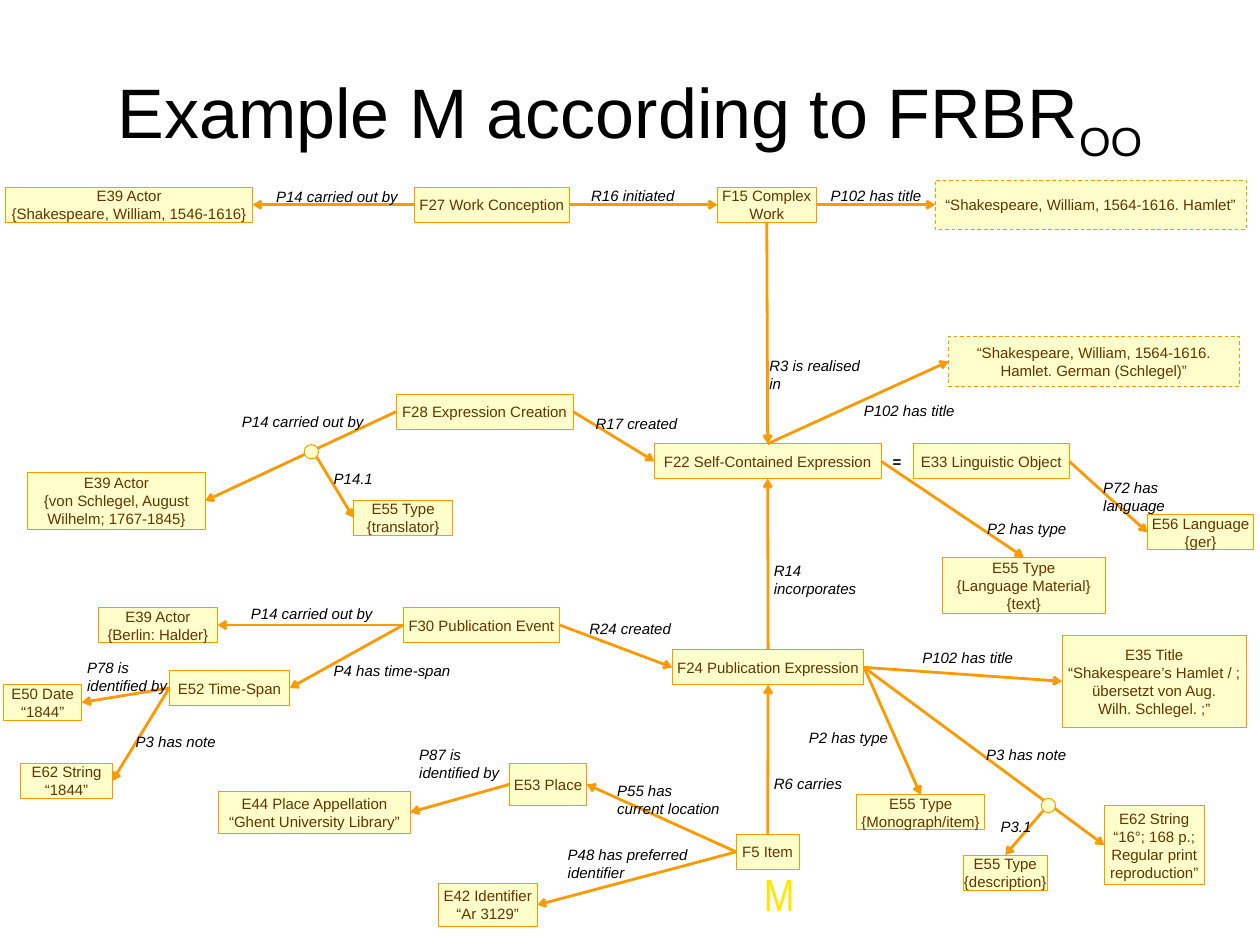
from dataclasses import dataclass, field
from enum import IntEnum

from pptx import Presentation
from pptx.dml.color import RGBColor
from pptx.enum.dml import MSO_LINE
from pptx.enum.shapes import MSO_CONNECTOR, MSO_SHAPE
from pptx.enum.text import MSO_ANCHOR, MSO_AUTO_SIZE, PP_ALIGN
from pptx.oxml.ns import qn
from pptx.util import Inches, Pt
from lxml.etree import SubElement


@dataclass(frozen=True)
class Theme:
    """Colours, fonts and sizes of the slide."""
    black: RGBColor = RGBColor.from_string("000000")
    brown: RGBColor = RGBColor.from_string("663300")
    cream: RGBColor = RGBColor.from_string("FFFFCC")
    orange: RGBColor = RGBColor.from_string("FF9900")
    marker_colors: tuple = (RGBColor.from_string("FFE701"), RGBColor.from_string("FE3E02"))
    font: str = "Arial"
    marker_font: str = "Arial Narrow"
    title_size: int = 56
    text_size: int = 12
    marker_size: int = 36
    outline: float = 0.75
    arrow: float = 2.25


class Side(IntEnum):
    """Connection sites of a rectangle."""
    TOP = 0
    LEFT = 1
    BOTTOM = 2
    RIGHT = 3


THEME = Theme()
TOP, LEFT, BOTTOM, RIGHT = Side
NODE_HEIGHT = 0.39
JUNCTION_SIZE = 0.16


def add_run(paragraph, text, color, size=THEME.text_size, bold=None, italic=None):
    """Append one formatted run."""
    run = paragraph.add_run()
    run.text = text
    font = run.font
    font.name, font.size, font.bold, font.italic = THEME.font, Pt(size), bold, italic
    if color is not None:
        font.color.rgb = color
    return run


def add_lines(paragraph, text, color, **style):
    """Append runs separated by line breaks."""
    for index, line in enumerate(text.split("\n")):
        if index:
            paragraph.add_line_break()
        add_run(paragraph, line, color, **style)


def add_arrow(slide, start, end):
    """Draw a straight orange arrow."""
    points = [Inches(value) for value in (*start, *end)]
    connector = slide.shapes.add_connector(MSO_CONNECTOR.STRAIGHT, *points)
    connector.line.color.rgb = THEME.orange
    connector.line.width = Pt(THEME.arrow)
    properties = connector._element.spPr
    SubElement(properties.find(qn("a:ln")), qn("a:tailEnd"), type="arrow")
    SubElement(properties, qn("a:effectLst"))
    return connector


def connect(slide, source, target, begin=RIGHT, end=LEFT):
    """Join two nodes with an arrow."""
    connector = add_arrow(slide, (0, 0), (1, 1))
    connector.begin_connect(source, begin)
    connector.end_connect(target, end)


@dataclass
class Region:
    """Part of the diagram, with positions relative to its left and top."""
    slide: object
    left: float
    top: float
    nodes: dict = field(default_factory=dict)

    def box(self, x, y, width, height):
        """Convert a relative box to slide lengths."""
        return [Inches(v) for v in (self.left + x, self.top + y, width, height)]

    def outlined(self, preset, box):
        """Add a cream shape with an orange outline."""
        shape = self.slide.shapes.add_shape(preset, *self.box(*box))
        shape.shadow.inherit = False
        shape.fill.solid()
        shape.fill.fore_color.rgb = THEME.cream
        shape.line.color.rgb = THEME.orange
        shape.line.width = Pt(THEME.outline)
        return shape

    def node(self, key, x, y, width, *paragraphs, height=NODE_HEIGHT, dashed=False):
        """Add a named rectangle with centred text."""
        shape = self.nodes[key] = self.outlined(MSO_SHAPE.RECTANGLE, (x, y, width, height))
        if dashed:
            shape.line.dash_style = MSO_LINE.DASH
        frame = shape.text_frame
        frame.word_wrap = False
        frame.vertical_anchor = MSO_ANCHOR.MIDDLE
        for index, text in enumerate(paragraphs):
            paragraph = frame.add_paragraph() if index else frame.paragraphs[0]
            paragraph.alignment = PP_ALIGN.CENTER
            add_lines(paragraph, text, THEME.brown)

    def link(self, source, target, begin=RIGHT, end=LEFT):
        """Join two nodes of this region."""
        connect(self.slide, self.nodes[source], self.nodes[target], begin, end)

    def label(self, x, y, width, text, bold=None, italic=True):
        """Add the name of a relation."""
        height = 0.1 + 0.2 * len(text.split("\n"))
        frame = self.slide.shapes.add_textbox(*self.box(x, y, width, height)).text_frame
        frame.word_wrap = True
        frame.margin_right = 0
        add_lines(frame.paragraphs[0], text, THEME.black, bold=bold, italic=italic)

    def junction(self, x, y, target, end, direction):
        """Add a circle on an arrow and a branch from it to a node."""
        radius = JUNCTION_SIZE / 2
        start = (self.left + x + radius + 0.06 * direction, self.top + y + radius + 0.06)
        add_arrow(self.slide, start, (start[0] + 1, start[1] + 1)).end_connect(self.nodes[target], end)
        self.outlined(MSO_SHAPE.OVAL, (x, y, JUNCTION_SIZE, JUNCTION_SIZE))


def add_title(slide, left, top, width, height):
    """Fill the title placeholder."""
    title = slide.shapes.title
    title.left, title.top, title.width, title.height = map(Inches, (left, top, width, height))
    frame = title.text_frame
    frame.word_wrap = True
    frame.auto_size = MSO_AUTO_SIZE.NONE
    frame.vertical_anchor = MSO_ANCHOR.MIDDLE
    frame.margin_left = frame.margin_right = Inches(0.14)
    frame.margin_top = frame.margin_bottom = Inches(0.07)
    paragraph = frame.paragraphs[0]
    paragraph.alignment = PP_ALIGN.CENTER
    add_run(paragraph, "Example M according to FRBR", THEME.black, THEME.title_size)
    subscript = add_run(paragraph, "OO", THEME.black, THEME.title_size)
    subscript._r.get_or_add_rPr().set("baseline", "-25000")


def add_work(slide, left, top):
    """Draw the row about the work."""
    region = Region(slide, left, top)
    region.node("actor", 0.06, 0.08, 2.75, "E39 Actor", "{Shakespeare, William, 1546-1616}")
    region.node("conception", 4.6, 0.08, 1.73, "F27 Work Conception")
    region.node("work", 7.97, 0.08, 1.1, "F15 Complex\nWork")
    region.node("title", 10.39, 0, 3.46, "“Shakespeare, William, 1564-1616. Hamlet”", height=0.55, dashed=True)
    region.link("conception", "actor", LEFT, RIGHT)
    region.link("conception", "work")
    region.link("work", "title")
    region.label(2.97, 0.03, 1.55, "P14 carried out by")
    region.label(6.47, 0.02, 1.12, "R16 initiated")
    region.label(9.13, 0.02, 1.21, "P102 has title")
    return region.nodes["work"]


def add_expression(slide, left, top):
    """Draw the region about the expression."""
    region = Region(slide, left, top)
    region.node("expression", 7.27, 1.19, 2.52, "F22 Self-Contained Expression")
    region.node("linguistic", 10.15, 1.19, 1.73, "E33 Linguistic Object")
    region.node("language", 12.75, 1.98, 1.18, "E56 Language", "{ger}")
    region.node("creation", 4.4, 0.64, 1.97, "F28 Expression Creation")
    region.node("actor", 0.31, 1.51, 1.97, "E39 Actor", "{von Schlegel, August\nWilhelm; 1767-1845}", height=0.63)
    region.node("role", 3.93, 1.82, 1.1, "E55 Type", "{translator}")
    region.node("type", 10.47, 2.45, 1.81, "E55 Type", "{Language Material}", "{text}", height=0.63)
    region.node("title", 10.54, 0, 3.23, "“Shakespeare, William, 1564-1616.\nHamlet. German (Schlegel)”",
                height=0.55, dashed=True)
    region.link("linguistic", "language")
    region.link("creation", "expression")
    region.link("creation", "actor", LEFT, RIGHT)
    region.link("expression", "type", RIGHT, TOP)
    region.link("expression", "title", TOP, LEFT)
    region.junction(3.38, 1.2, "role", LEFT, 1)
    region.label(8.45, 0.17, 1.38, "R3 is realised\nin")
    region.label(9.82, 1.24, 0.3, "=", bold=True, italic=None)
    region.label(12.16, 1.53, 1.54, "P72 has\nlanguage")
    region.label(6.52, 0.82, 1.11, "R17 created")
    region.label(2.59, 0.8, 1.55, "P14 carried out by")
    region.label(3.61, 1.43, 0.64, "P14.1")
    region.label(8.5, 2.45, 1.47, "R14\nincorporates")
    region.label(10.87, 1.98, 1.09, "P2 has type")
    region.label(9.5, 0.67, 1.21, "P102 has title")
    return region.nodes["expression"]


def add_publication(slide, left, top):
    """Draw the region about the publication."""
    region = Region(slide, left, top)
    region.node("publication", 7.47, 0.55, 2.13, "F24 Publication Expression")
    region.node("event", 4.48, 0.08, 1.74, "F30 Publication Event")
    region.node("actor", 1.09, 0.08, 1.33, "E39 Actor", "{Berlin: Halder}")
    region.node("span", 1.88, 0.78, 1.34, "E52 Time-Span")
    region.node("date", 0.04, 0.94, 0.87, "E50 Date", "“1844”")
    region.node("note", 0.23, 1.81, 1.02, "E62 String", "“1844”")
    region.node("title", 11.8, 0.39, 2.05, "E35 Title",
                "“Shakespeare’s Hamlet / ;\nübersetzt von Aug.\nWilh. Schlegel. ;”", height=1.02)
    region.node("extent", 12.27, 2.28, 1.11, "E62 String", "“16°; 168 p.;\nRegular print\nreproduction”", height=0.88)
    region.node("description", 10.7, 2.83, 0.94, "E55 Type", "{description}")
    region.node("type", 9.52, 2.16, 1.42, "E55 Type", "{Monograph/item}")
    region.link("event", "publication")
    for source, target in (("event", "actor"), ("event", "span"), ("span", "date"), ("span", "note")):
        region.link(source, target, LEFT, RIGHT)
    region.link("publication", "title")
    region.link("publication", "extent")
    region.link("publication", "type", RIGHT, TOP)
    region.junction(11.57, 2.2, "description", TOP, -1)
    region.label(6.45, 0.17, 1.11, "R24 created")
    region.label(2.69, 0, 1.55, "P14 carried out by")
    region.label(3.61, 0.63, 1.49, "P4 has time-span")
    region.label(0.87, 0.6, 1.09, "P78 is\nidentified by")
    region.label(1.41, 1.42, 1.09, "P3 has note")
    region.label(10.15, 0.49, 1.21, "P102 has title")
    region.label(10.86, 1.57, 1.09, "P3 has note")
    region.label(8.89, 1.38, 1.09, "P2 has type")
    region.label(11.02, 2.36, 0.54, "P3.1")
    return region.nodes["publication"]


def add_item(slide, left, top):
    """Draw the region about the item and its marker."""
    region = Region(slide, left, top)
    region.node("item", 5.75, 1.03, 0.7, "F5 Item")
    region.node("place", 3.23, 0.24, 0.86, "E53 Place", height=0.47)
    region.node("identifier", 2.44, 1.58, 1.1, "E42 Identifier", "“Ar 3129”", height=0.47)
    region.node("appellation", 0, 0.55, 2.13, "E44 Place Appellation", "“Ghent University Library”", height=0.47)
    for source, target in (("item", "place"), ("place", "appellation"), ("item", "identifier")):
        region.link(source, target, LEFT, RIGHT)
    region.label(6.07, 0.32, 0.96, "R6 carries")
    region.label(4.33, 0.4, 1.34, "P55 has\ncurrent location")
    region.label(2.13, 0, 1.09, "P87 is\nidentified by")
    region.label(3.78, 1.11, 1.53, "P48 has preferred\nidentifier")
    frame = slide.shapes.add_textbox(*region.box(5.96, 1.34, 0.47, 0.72)).text_frame
    frame.word_wrap = False
    paragraph = frame.paragraphs[0]
    paragraph.alignment = PP_ALIGN.CENTER
    font = add_run(paragraph, "M", None, THEME.marker_size).font
    font.name = THEME.marker_font
    font.fill.gradient()
    font.fill.gradient_angle = 270
    for stop, color in zip(font.fill.gradient_stops, THEME.marker_colors):
        stop.color.rgb = color
    return region.nodes["item"]


def main():
    """Build and save the slide."""
    presentation = Presentation()
    presentation.slide_width, presentation.slide_height = Inches(14), Inches(10.5)
    slide = presentation.slides.add_slide(presentation.slide_layouts[5])
    add_title(slide, 0.7, 0.42, 12.6, 1.75)
    work = add_work(slide, 0, 2)
    expression = add_expression(slide, 0, 3.74)
    publication = add_publication(slide, 0, 6.67)
    item = add_item(slide, 2.43, 8.24)
    connect(slide, work, expression, BOTTOM, TOP)
    connect(slide, publication, expression, TOP, BOTTOM)
    connect(slide, item, publication, TOP, BOTTOM)
    presentation.save("out.pptx")


if __name__ == "__main__":
    main()
